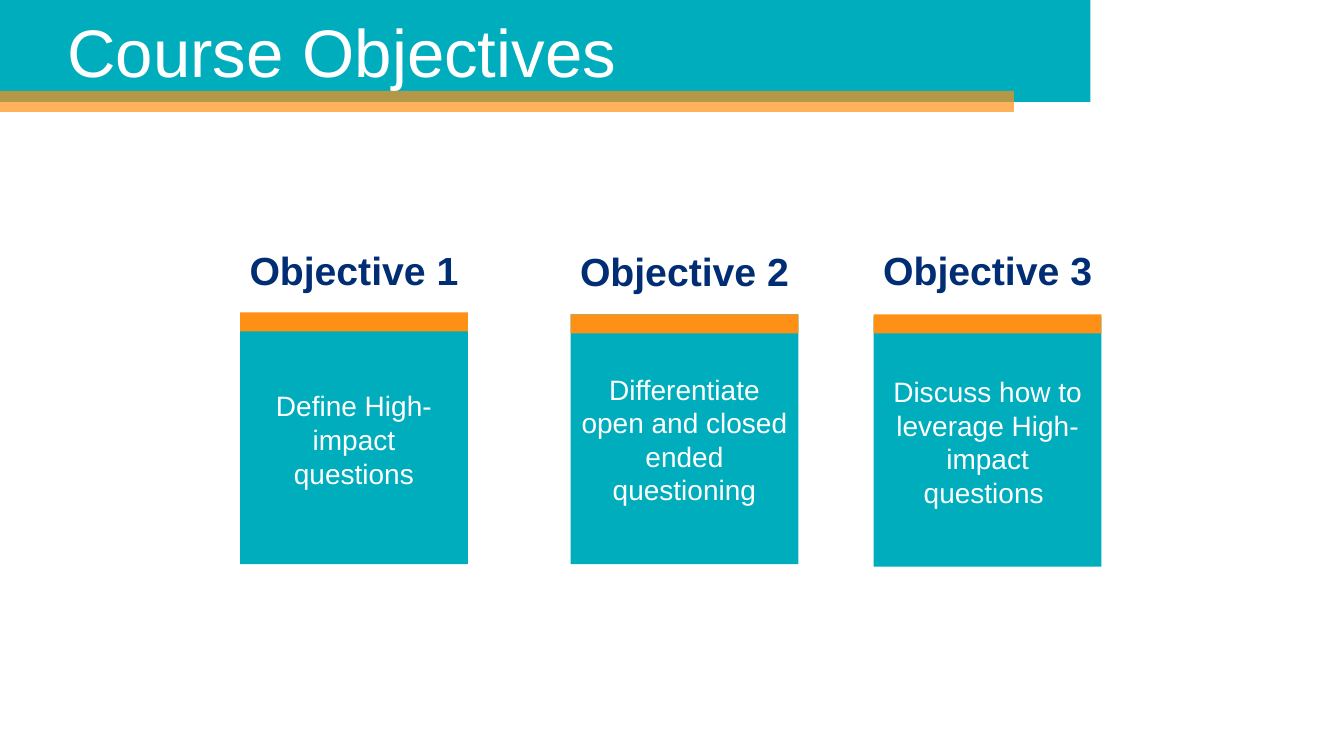
from dataclasses import dataclass

from lxml import etree
from pptx import Presentation
from pptx.dml.color import RGBColor
from pptx.enum.shapes import MSO_SHAPE
from pptx.enum.text import MSO_ANCHOR, PP_ALIGN
from pptx.oxml.ns import qn
from pptx.shapes.autoshape import Shape
from pptx.slide import Slide
from pptx.util import Cm, Pt

RECT = MSO_SHAPE.RECTANGLE
TOP, MIDDLE = MSO_ANCHOR.TOP, MSO_ANCHOR.MIDDLE
LEFT, CENTER = PP_ALIGN.LEFT, PP_ALIGN.CENTER

TEAL, ORANGE, NAVY, WHITE = "00ADBC", "FF9016", "002D73", "FFFFFF"
FONT = "Arial"
CARD_W, CARD_H, BAR_H = 5.74, 6.3, 0.48
HEADING_W, HEADING_H = 9.73, 2.06


@dataclass
class Box:
    x: float
    y: float
    w: float
    h: float


@dataclass
class TextStyle:
    size: int
    color: str
    align: PP_ALIGN = CENTER
    anchor: MSO_ANCHOR = TOP
    bold: bool = False
    line_spacing: float = 1.0


@dataclass
class Objective:
    heading: str
    text: str
    x: float
    heading_y: float
    bar_y: float
    card_y: float


TITLE_STYLE = TextStyle(48, WHITE, align=LEFT)
HEADING_STYLE = TextStyle(28, NAVY, bold=True, line_spacing=1.5)
CARD_STYLE = TextStyle(20, WHITE, anchor=MIDDLE)

OBJECTIVES = [
    Objective("Objective 1", "Define High-impact questions", 6.05, 5.49, 7.87, 7.92),
    Objective("Objective 2", "Differentiate open and closed ended questioning",
              14.38, 5.51, 7.92, 7.92),
    Objective("Objective 3", "Discuss how to leverage High-impact questions ",
              22.02, 5.49, 7.92, 7.98),
]


def rgb(value: str) -> RGBColor:
    return RGBColor.from_string(value)


def write(sp: Shape, text: str, style: TextStyle) -> None:
    tf = sp.text_frame
    tf.word_wrap = True
    tf.vertical_anchor = style.anchor
    p = tf.paragraphs[0]
    p.text = text
    p.alignment = style.align
    p.line_spacing = style.line_spacing
    font = p.runs[0].font
    font.name = FONT
    font.size = Pt(style.size)
    font.bold = style.bold
    font.color.rgb = rgb(style.color)


def add_rect(s: Slide, box: Box, fill: str, opacity: int = 100) -> Shape:
    sp = s.shapes.add_shape(RECT, Cm(box.x), Cm(box.y), Cm(box.w), Cm(box.h))
    sp.shadow.inherit = False
    sp.fill.solid()
    sp.fill.fore_color.rgb = rgb(fill)
    sp.line.fill.background()
    if opacity < 100:
        color = sp.fill._xPr.find(qn("a:solidFill")).find(qn("a:srgbClr"))
        etree.SubElement(color, qn("a:alpha")).set("val", str(opacity * 1000))
    return sp


def add_text(s: Slide, box: Box, text: str, style: TextStyle) -> None:
    sp = s.shapes.add_textbox(Cm(box.x), Cm(box.y), Cm(box.w), Cm(box.h))
    write(sp, text, style)


def add_objective(s: Slide, item: Objective) -> None:
    card = add_rect(s, Box(item.x, item.card_y, CARD_W, CARD_H), TEAL)
    write(card, item.text, CARD_STYLE)
    add_rect(s, Box(item.x, item.bar_y, CARD_W, BAR_H), ORANGE)
    heading_x = item.x + (CARD_W - HEADING_W) / 2
    add_text(s, Box(heading_x, item.heading_y, HEADING_W, HEADING_H),
             item.heading, HEADING_STYLE)


def main() -> None:
    prs = Presentation()
    prs.slide_width, prs.slide_height = Cm(33.87), Cm(19.05)
    s = prs.slides.add_slide(prs.slide_layouts[6])
    for item in OBJECTIVES:
        add_objective(s, item)
    add_rect(s, Box(0, 0, 27.48, 2.57), TEAL)
    add_rect(s, Box(0, 2.29, 25.55, 0.53), ORANGE, opacity=70)
    add_text(s, Box(1.45, 0.13, 24.1, 2.31), "Course Objectives", TITLE_STYLE)
    prs.save("out.pptx")


if __name__ == "__main__":
    main()
